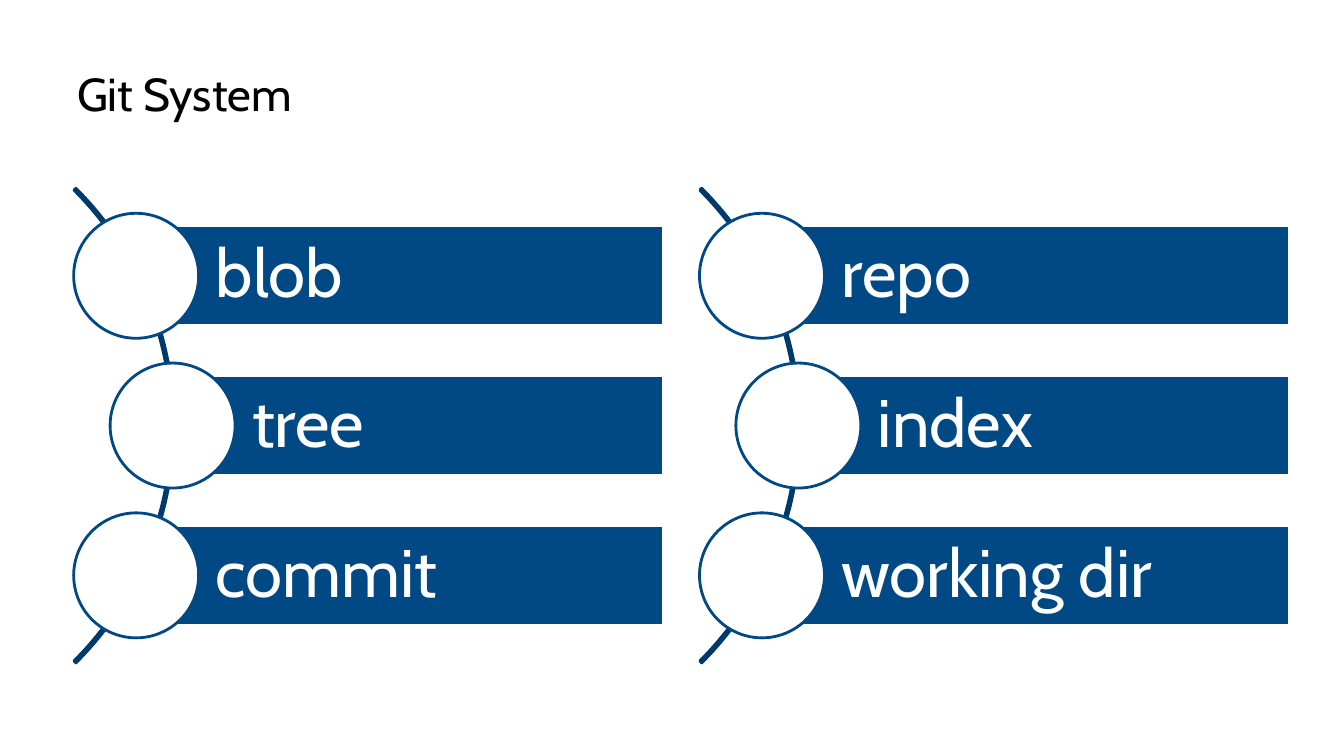
from dataclasses import dataclass

from pptx import Presentation
from pptx.dml.color import RGBColor as Rgb
from pptx.enum.shapes import MSO_SHAPE as Kind
from pptx.enum.text import MSO_ANCHOR as Anchor, PP_ALIGN as Align
from pptx.util import Pt


@dataclass(frozen=True)
class Theme:
    font: str = "Cabin"
    black: Rgb = Rgb(0x00, 0x00, 0x00)
    white: Rgb = Rgb(0xFF, 0xFF, 0xFF)
    blue: Rgb = Rgb(0x00, 0x49, 0x85)
    navy: Rgb = Rgb(0x00, 0x3A, 0x6B)
    title: int = 33
    label: int = 48
    line: int = 2


THEME = Theme()
LISTS = (("blob", "tree", "commit"), ("repo", "index", "working dir"))
LEFT, SHIFT = 97.3, 447
MID, PITCH = 304, 107
WIDTH, HEIGHT = 376.5, 71.3
DOT, INDENT = 89.3, 26
ARC = 479.5


def write(shape, text, size, color, pads):
    frame = shape.text_frame
    frame.word_wrap = True
    frame.vertical_anchor = Anchor.MIDDLE
    left, rest = pads
    frame.margin_left = Pt(left)
    frame.margin_top = frame.margin_right = frame.margin_bottom = Pt(rest)
    para = frame.paragraphs[0]
    para.text = text
    para.alignment = Align.LEFT
    para.font.name = THEME.font
    para.font.size = Pt(size)
    para.font.color.rgb = color
    return para


def add_title(slide, text):
    box = slide.shapes.add_textbox(Pt(48), Pt(21.6), Pt(878), Pt(90))
    write(box, text, THEME.title, THEME.black, (7.2, 3.6))


def add_form(slide, kind, left, mid, width, height, fill, line):
    shape = slide.shapes.add_shape(
        kind, Pt(left), Pt(mid - height / 2), Pt(width), Pt(height))
    shape.shadow.inherit = False
    if fill is None:
        shape.fill.background()
    else:
        shape.fill.solid()
        shape.fill.fore_color.rgb = fill
    shape.line.color.rgb = line
    shape.line.width = Pt(THEME.line)
    return shape


def add_arc(slide, left):
    arc = add_form(slide, Kind.BLOCK_ARC, left, MID, ARC, ARC, None, THEME.navy)
    arc.adjustments[0] = 189
    arc.adjustments[1] = 27
    arc.adjustments[2] = THEME.line / ARC


def add_item(slide, text, left, mid, width):
    bar = add_form(slide, Kind.RECTANGLE, left, mid, width, HEIGHT,
                   THEME.blue, THEME.white)
    para = write(bar, text, THEME.label, THEME.white, (56.8, 9.4))
    para.line_spacing = 0.9
    add_form(slide, Kind.OVAL, left - DOT / 2, mid, DOT, DOT,
             THEME.white, THEME.blue)


def add_list(slide, names, left):
    add_arc(slide, left - 452.3)
    for row, name in enumerate(names):
        inset = INDENT * (row % 2)
        mid = MID + PITCH * (row - 1)
        add_item(slide, name, left + inset, mid, WIDTH - inset)


def main():
    deck = Presentation()
    deck.slide_width, deck.slide_height = Pt(960), Pt(540)
    slide = deck.slides.add_slide(deck.slide_layouts[6])
    add_title(slide, "Git System")
    for col, names in enumerate(LISTS):
        add_list(slide, names, LEFT + SHIFT * col)
    deck.save("out.pptx")


if __name__ == "__main__":
    main()
